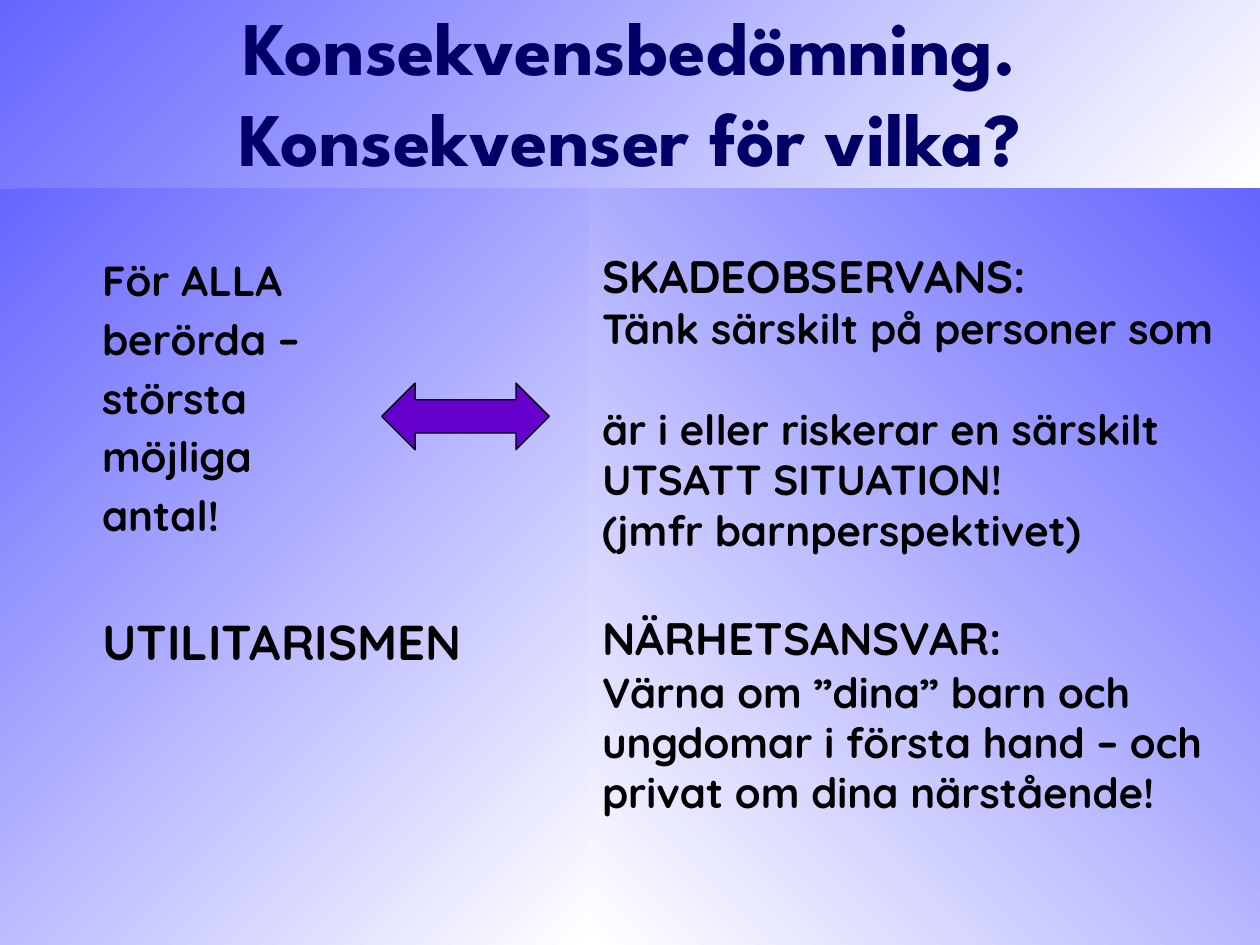
"""Build a slide on weighing consequences: for all, or for those at risk."""
from dataclasses import dataclass

from pptx import Presentation
from pptx.dml.color import RGBColor
from pptx.enum.shapes import MSO_SHAPE as Shape
from pptx.enum.text import MSO_ANCHOR as Anchor, MSO_AUTO_SIZE as Fit, PP_ALIGN as Align
from pptx.util import Inches, Pt

BLUE, WHITE, BLACK, NAVY, PURPLE = "6666FF", "FFFFFF", "000000", "000066", "6600CC"


@dataclass
class Line:
    text: str
    gap: float = 0
    size: float = 24


@dataclass
class Panel:
    left: float
    width: float
    inset: float
    top: float
    stops: tuple[str, str]
    angle: float
    lines: list[Line]


PANELS = [
    Panel(0, 4.69, 0.81, 0.52, (BLUE, WHITE), 315, [
        Line("För ALLA"),
        Line("berörda –", 4.8),
        Line("största", 4.8),
        Line("möjliga", 4.8),
        Line("antal!", 4.8),
        Line("UTILITARISMEN", 41, 28),
    ]),
    Panel(4.68, 5.32, 0.1, 0.47, (WHITE, BLUE), 45, [
        Line("SKADEOBSERVANS:", size=26),
        Line("Tänk särskilt på personer som"),
        Line("är i eller riskerar en särskilt", 28.8),
        Line("UTSATT SITUATION!"),
        Line("(jmfr barnperspektivet)"),
        Line("NÄRHETSANSVAR:", 31.5, 26),
        Line("Värna om ”dina” barn och ungdomar i första hand – "
             "och privat om dina närstående!", 1),
    ]),
]


def paint(color, code: str) -> None:
    """Set a colour from a hex string."""
    color.rgb = RGBColor.from_string(code)


def blend(fill, stops: tuple[str, str], angle: float) -> None:
    """Fill with a straight two-colour gradient."""
    fill.gradient()
    fill.gradient_angle = angle
    for stop, code in zip(fill.gradient_stops, stops):
        paint(stop.color, code)


def style(para, name: str, size: float, code: str) -> None:
    """Set the bold font of a paragraph."""
    font = para.font
    font.name, font.size, font.bold = name, Pt(size), True
    paint(font.color, code)


def place(shape, left: float, top: float, width: float, height: float) -> None:
    """Move and size a shape in inches."""
    shape.left, shape.top = Inches(left), Inches(top)
    shape.width, shape.height = Inches(width), Inches(height)


def add_title(slide) -> None:
    """Format the title as a band across the top."""
    title = slide.shapes.title
    place(title, 0, 0, 10, 1.5)
    blend(title.fill, (BLUE, WHITE), 315)
    frame = title.text_frame
    frame.auto_size, frame.vertical_anchor = Fit.NONE, Anchor.MIDDLE
    frame.margin_top, frame.margin_bottom = 0, Inches(0.06)
    para = frame.paragraphs[0]
    para.text = "Konsekvensbedömning.\vKonsekvenser för vilka?"
    para.alignment = Align.CENTER
    style(para, "League Spartan", 43.2, NAVY)


def add_panel(slide, panel: Panel) -> None:
    """Draw one text panel below the title."""
    box = slide.shapes.add_textbox(
        Inches(panel.left), Inches(1.5), Inches(panel.width), Inches(6))
    blend(box.fill, panel.stops, panel.angle)
    frame = box.text_frame
    frame.word_wrap, frame.auto_size = True, Fit.NONE
    frame.margin_left, frame.margin_top = Inches(panel.inset), Inches(panel.top)
    for i, line in enumerate(panel.lines):
        para = frame.add_paragraph() if i else frame.paragraphs[0]
        para.text = line.text
        para.space_before = Pt(line.gap)
        style(para, "Quicksand", line.size, BLACK)


def add_arrow(slide) -> None:
    """Draw the double arrow between the two views."""
    arrow = slide.shapes.add_shape(
        Shape.LEFT_RIGHT_ARROW, Inches(3.03), Inches(3.04), Inches(1.33), Inches(0.53))
    arrow.shadow.inherit = False
    arrow.fill.solid()
    paint(arrow.fill.fore_color, PURPLE)
    paint(arrow.line.color, BLACK)
    arrow.line.width = Pt(0.75)


def main() -> None:
    """Build and save the slide."""
    deck = Presentation()
    deck.slide_width, deck.slide_height = Inches(10), Inches(7.5)
    slide = deck.slides.add_slide(deck.slide_layouts[5])
    add_title(slide)
    for panel in PANELS:
        add_panel(slide, panel)
    add_arrow(slide)
    deck.save("out.pptx")


if __name__ == "__main__":
    main()
